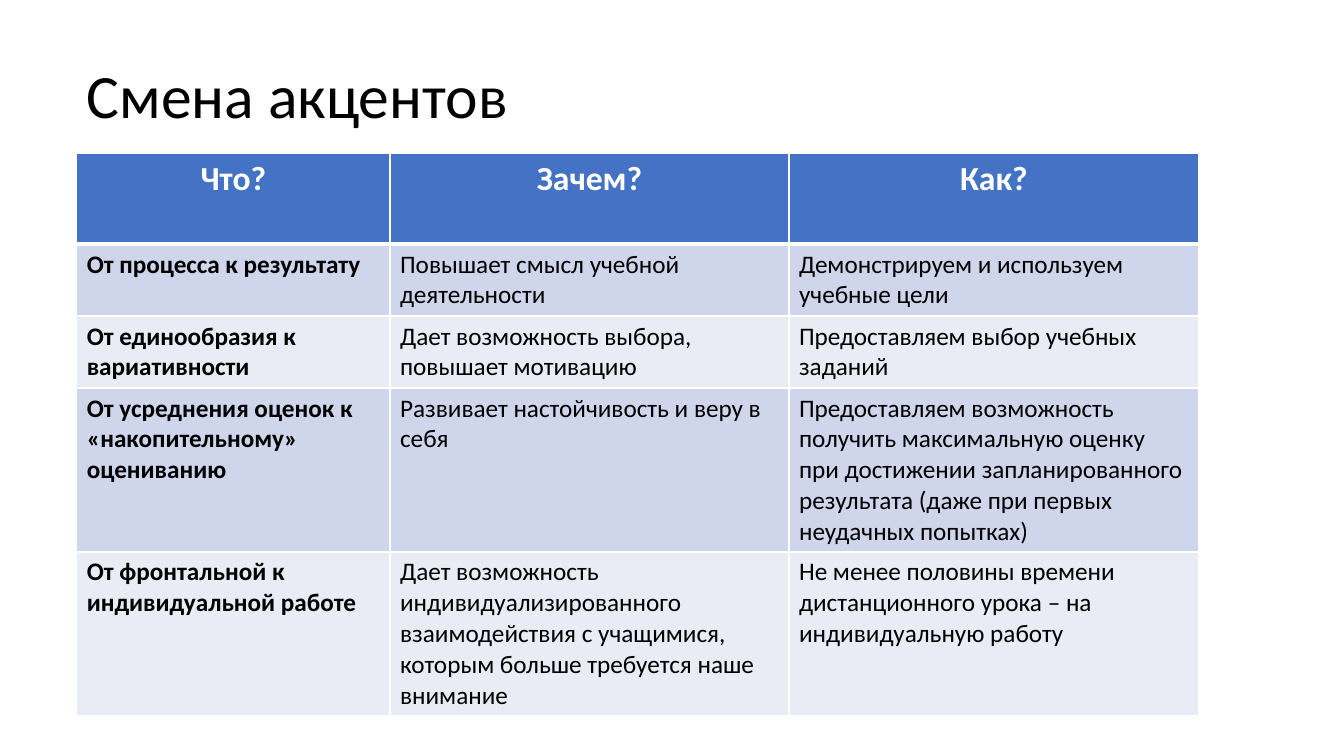
"""Build the slide on the shift of emphasis in teaching."""
from lxml import etree
from pptx import Presentation
from pptx.dml.color import RGBColor
from pptx.enum.text import MSO_ANCHOR, MSO_AUTO_SIZE, PP_ALIGN
from pptx.oxml.ns import qn
from pptx.util import Pt

LEFT, CENTER = PP_ALIGN.LEFT, PP_ALIGN.CENTER
MIDDLE = MSO_ANCHOR.MIDDLE
NO_AUTOFIT = MSO_AUTO_SIZE.NONE

FONT = "Calibri"
BLACK, WHITE = "000000", "FFFFFF"
HEADER_FILL = "4472C4"
BAND_FILLS = ("E9EBF5", "CFD5EA")
COLUMN_WIDTHS = (223.8, 285, 292.8)
ROW_HEIGHTS = (65, 51.4, 51.4, 117, 117)
SHIFTS = (
    ("Что?", "Зачем?", "Как?"),
    ("От процесса к результату",
     "Повышает смысл учебной деятельности",
     "Демонстрируем и используем учебные цели"),
    ("От единообразия к вариативности",
     "Дает возможность выбора, повышает мотивацию",
     "Предоставляем выбор учебных заданий"),
    ("От усреднения оценок к «накопительному» оцениванию",
     "Развивает настойчивость и веру в себя",
     "Предоставляем возможность получить максимальную оценку при достижении "
     "запланированного результата (даже при первых неудачных попытках)"),
    ("От фронтальной к индивидуальной работе",
     "Дает возможность индивидуализированного взаимодействия с учащимися, "
     "которым больше требуется наше внимание",
     "Не менее половины времени дистанционного урока – на индивидуальную работу"),
)


def color(value):
    """Turn a hex string into a colour."""
    return RGBColor.from_string(value)


def write(frame, text, size, ink, bold=False, align=LEFT):
    """Put one formatted paragraph into a text frame."""
    frame.text = text
    paragraph = frame.paragraphs[0]
    paragraph.alignment = align
    for run in paragraph.runs:
        run.font.name = FONT
        run.font.size = Pt(size)
        run.font.bold = bold
        run.font.color.rgb = color(ink)


def add_borders(cell, bottom_width):
    """Give a cell white borders, with its own width at the bottom."""
    properties = cell._tc.get_or_add_tcPr()
    for side, width in (("L", 1), ("R", 1), ("T", 1), ("B", bottom_width)):
        line = etree.SubElement(properties, qn(f"a:ln{side}"), w=str(Pt(width)))
        fill = etree.SubElement(line, qn("a:solidFill"))
        etree.SubElement(fill, qn("a:srgbClr"), val=WHITE)


def place_title(slide, left, top, width, height):
    """Place the slide title in the given box."""
    title = slide.shapes.title
    title.left, title.top = Pt(left), Pt(top)
    title.width, title.height = Pt(width), Pt(height)
    frame = title.text_frame
    write(frame, "Смена акцентов", 44, BLACK)
    frame.auto_size = NO_AUTOFIT
    frame.vertical_anchor = MIDDLE
    frame.paragraphs[0].line_spacing = 0.9


def place_shifts(slide, left, top, width, height):
    """Place the table of shifts in the given box."""
    table = slide.shapes.add_table(
        len(SHIFTS), len(COLUMN_WIDTHS), Pt(left), Pt(top), Pt(width), Pt(height)
    ).table
    for column, column_width in zip(table.columns, COLUMN_WIDTHS):
        column.width = Pt(column_width)
    for i, (row, row_height) in enumerate(zip(table.rows, ROW_HEIGHTS)):
        row.height = Pt(row_height)
        header = i == 0
        for j, cell in enumerate(row.cells):
            add_borders(cell, 3 if header or i == 0 else 1)
            cell.fill.solid()
            cell.fill.fore_color.rgb = color(HEADER_FILL if header else BAND_FILLS[i % 2])
            if header:
                write(cell.text_frame, SHIFTS[i][j], 24, WHITE, True, CENTER)
            else:
                write(cell.text_frame, SHIFTS[i][j], 18, BLACK, j == 0)


def main():
    """Build and save the presentation."""
    deck = Presentation()
    deck.slide_width, deck.slide_height = Pt(960), Pt(540)
    slide = deck.slides.add_slide(deck.slide_layouts[5])
    place_title(slide, 54.8, 18, 828, 104.4)
    place_shifts(slide, 54.8, 109.4, sum(COLUMN_WIDTHS), sum(ROW_HEIGHTS))
    deck.save("out.pptx")


if __name__ == "__main__":
    main()
